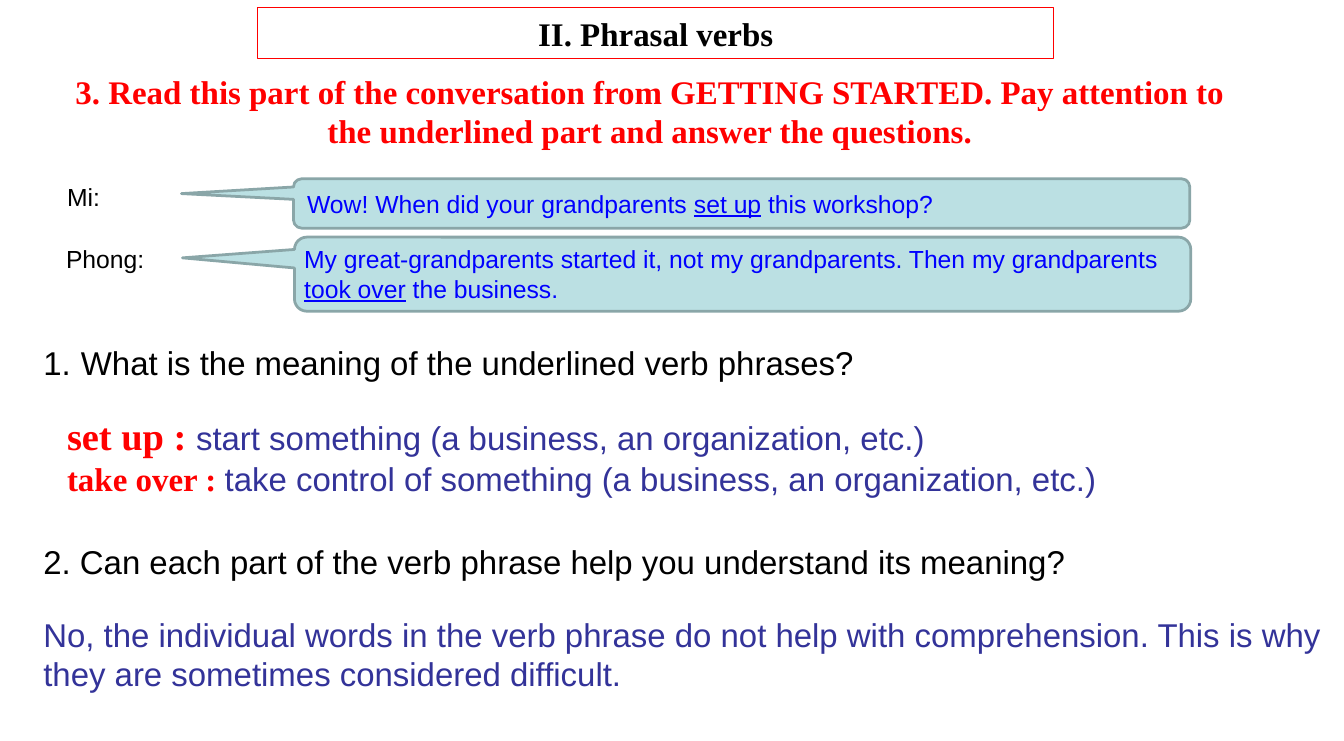
"""Build the phrasal verbs lesson slide."""
from lxml.etree import SubElement
from pptx import Presentation
from pptx.dml.color import RGBColor
from pptx.enum.shapes import MSO_SHAPE
from pptx.enum.text import MSO_ANCHOR, PP_ALIGN
from pptx.oxml.ns import qn
from pptx.util import Inches, Pt

COLORS = {
    "black": "000000",
    "red": "FF0000",
    "blue": "0000FF",
    "indigo": "333399",
    "bubble": "BBE0E3",
    "bubble edge": "8AA6A8",
}
SERIF = "Times New Roman"

presentation = Presentation()
presentation.slide_width = Inches(13.6)
presentation.slide_height = Inches(7.5)
slide = presentation.slides.add_slide(presentation.slide_layouts[6])
column = presentation.slide_width / 136
row = presentation.slide_height / 75


def place(left, top, width, height, preset=None):
    area = [round(value) for value in (left * column, top * row, width * column, height * row)]
    if preset is None:
        shape = slide.shapes.add_textbox(*area)
    else:
        shape = slide.shapes.add_shape(preset, *area)
        shape.shadow.inherit = False
    shape.text_frame.word_wrap = True
    return shape


def write(paragraph, text, size=24, font="Arial", color="black", bold=False, underline=False, align=PP_ALIGN.LEFT):
    paragraph.alignment = align
    run = paragraph.add_run()
    run.text = text
    run.font.size = Pt(size)
    run.font.name = font
    run.font.color.rgb = RGBColor.from_string(COLORS[color])
    run.font.bold = bold
    run.font.underline = underline


questions = place(3.4, 34.2, 120.1, 25.2).text_frame
first_question = questions.paragraphs[0]
second_question = questions.add_paragraph()
second_question.space_before = Pt(116)
write(first_question, "What is the meaning of the underlined verb phrases?")
write(second_question, "2. Can each part of the verb phrase help you understand its meaning?")
for question in (first_question, second_question):
    properties = question._p.get_or_add_pPr()
    properties.set("marL", str(Inches(0.38)))
    properties.set("indent", str(-Inches(0.38)))
numbering = first_question._p.get_or_add_pPr()
SubElement(numbering, qn("a:buFont"), typeface="+mj-lt")
SubElement(numbering, qn("a:buAutoNum"), type="arabicPeriod")

heading = place(26.1, 0.8, 80.5, 5.1, MSO_SHAPE.RECTANGLE)
heading.fill.background()
heading.line.color.rgb = RGBColor.from_string(COLORS["red"])
heading.line.width = Pt(0.75)
heading.text_frame.vertical_anchor = MSO_ANCHOR.MIDDLE
write(heading.text_frame.paragraphs[0], "II. Phrasal verbs", font=SERIF, bold=True, align=PP_ALIGN.CENTER)

task = place(5.7, 6.7, 120.1, 9.1).text_frame.paragraphs[0]
write(
    task,
    "3. Read this part of the conversation from GETTING STARTED. "
    "Pay attention to the underlined part and answer the questions.",
    font=SERIF, color="red", bold=True, align=PP_ALIGN.CENTER,
)

conversation = [
    ("Mi:", (5.8, 17.9, 9.1, 4), (29.7, 18.1, 90.7, 5), -0.2, (30.1, 18.6, 89.5, 4),
     ("Wow! When did your grandparents ", "set up", " this workshop?")),
    ("Phong:", (5.7, 24.2, 13.6, 4), (29.8, 24, 90.7, 7.5), -0.22, (29.8, 24.2, 89.5, 7.1),
     ("My great-grandparents started it, not my grandparents. Then my grandparents ",
      "took over", " the business.")),
]
for speaker, name_area, bubble_area, tip_height, speech_area, (before, phrase, after) in conversation:
    bubble = place(*bubble_area, preset=MSO_SHAPE.ROUNDED_RECTANGULAR_CALLOUT)
    bubble.adjustments[0] = -0.625
    bubble.adjustments[1] = tip_height
    bubble.fill.solid()
    bubble.fill.fore_color.rgb = RGBColor.from_string(COLORS["bubble"])
    bubble.line.color.rgb = RGBColor.from_string(COLORS["bubble edge"])
    bubble.line.width = Pt(2)
    speech = place(*speech_area).text_frame.paragraphs[0]
    write(speech, before, size=18, color="blue")
    write(speech, phrase, size=18, color="blue", underline=True)
    write(speech, after, size=18, color="blue")
    write(place(*name_area).text_frame.paragraphs[0], speaker, size=18)

meanings = place(5.8, 41.2, 123.5, 9.8).text_frame
set_up = meanings.paragraphs[0]
take_over = meanings.add_paragraph()
for entry, verb, verb_size, meaning in (
    (set_up, "set up : ", 28, "start something (a business, an organization, etc.)"),
    (take_over, "take over : ", 24, "take control of something (a business, an organization, etc.)"),
):
    write(entry, verb, size=verb_size, font=SERIF, color="red", bold=True)
    write(entry, meaning, color="indigo")

answer = place(3.4, 61.7, 131.5, 9.1).text_frame.paragraphs[0]
write(
    answer,
    "No, the individual words in the verb phrase do not help with comprehension. "
    "This is why they are sometimes considered difficult.",
    color="indigo",
)

presentation.save("out.pptx")
